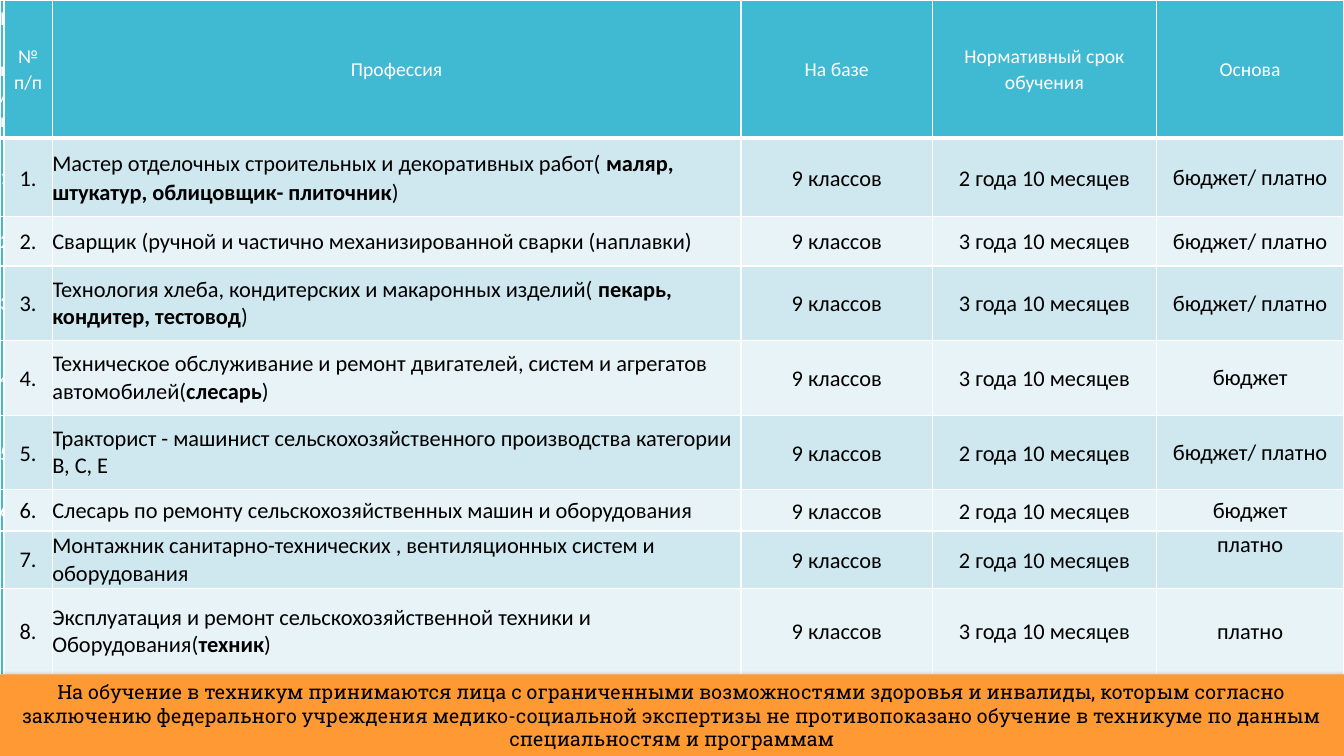
import pptx
import pptx.dml.color
import pptx.enum.shapes
import pptx.enum.text
import pptx.oxml
import pptx.oxml.ns
import pptx.util
from pptx.dml.color import RGBColor
from pptx.util import Inches

WHITE = RGBColor(0xFF, 0xFF, 0xFF)
BLACK = RGBColor(0x00, 0x00, 0x00)
TEAL = RGBColor(0x40, 0xBA, 0xD2)
BLUE_BAND = RGBColor(0xCF, 0xE7, 0xEE)
PALE_BAND = RGBColor(0xE8, 0xF3, 0xF7)
ORANGE = RGBColor(0xFF, 0x99, 0x33)

ALIGN = pptx.enum.text.PP_ALIGN
ANCHOR = pptx.enum.text.MSO_ANCHOR

COLUMN_WIDTHS = [0.03, 0.48, 6.83, 1.9, 2.22, 1.86]
ROW_HEIGHTS = [1.37, 0.78, 0.49, 0.74, 0.74, 0.74, 0.41, 0.57, 0.85]
HEADINGS = ["№ п/п", "№ п/п", "Профессия", "На базе", "Нормативный срок обучения", "Основа"]
BOTH = "бюджет/ платно"
PROFESSIONS = [
    ("Мастер отделочных строительных и декоративных работ( |маляр, штукатур, облицовщик- плиточник|)", 2, BOTH),
    ("Сварщик (ручной и частично механизированной сварки (наплавки)", 3, BOTH),
    ("Технология хлеба, кондитерских и макаронных изделий( |пекарь, кондитер, тестовод|)", 3, BOTH),
    ("Техническое обслуживание и ремонт двигателей, систем и агрегатов автомобилей(|слесарь|)", 3, "бюджет"),
    ("Тракторист - машинист сельскохозяйственного производства категории B, C, E", 2, BOTH),
    ("Слесарь по ремонту сельскохозяйственных машин и оборудования", 2, "бюджет"),
    ("Монтажник санитарно-технических , вентиляционных систем и\nоборудования", 2, "платно"),
    ("Эксплуатация и ремонт сельскохозяйственной техники и\nОборудования(|техник|)", 3, "платно"),
]
NOTICE = (
    "На обучение в техникум принимаются лица с ограниченными возможностями здоровья и инвалиды, "
    "которым согласно заключению федерального учреждения медико-социальной экспертизы "
    "не противопоказано обучение в техникуме по данным специальностям и программам"
)


def add_span(para, text, size, color, font="Calibri", bold=False):
    span = para.add_run()
    span.text = text
    span.font.name = font
    span.font.size = pptx.util.Pt(size)
    span.font.bold = bold
    span.font.color.rgb = color


def set_borders(cell, bottom):
    properties = cell._tc.get_or_add_tcPr()
    widths = {"lnL": 1, "lnR": 1, "lnT": 1, "lnB": bottom}
    for position, (side, width) in enumerate(widths.items()):
        border = pptx.oxml.parse_xml(
            f'<a:{side} {pptx.oxml.ns.nsdecls("a")} w="{pptx.util.Pt(width)}">'
            f'<a:solidFill><a:srgbClr val="{WHITE}"/></a:solidFill></a:{side}>'
        )
        properties.insert(position, border)


def fill_cell(cell, text, fill, color, size=16, align=ALIGN.CENTER, loose=True, bottom=1):
    cell.margin_left = cell.margin_right = cell.margin_top = cell.margin_bottom = 0
    cell.vertical_anchor = ANCHOR.MIDDLE
    cell.fill.solid()
    cell.fill.fore_color.rgb = fill
    set_borders(cell, bottom)
    frame = cell.text_frame
    for index, line in enumerate(text.split("\n") if text else []):
        para = frame.add_paragraph() if index else frame.paragraphs[0]
        para.alignment = align
        if loose:
            para.line_spacing = 1.07
            para.space_after = pptx.util.Pt(8)
        for part, words in enumerate(line.split("|")):
            add_span(para, words, size, color, bold=part % 2 == 1)


def add_professions(page):
    frame = page.shapes.add_table(
        len(ROW_HEIGHTS), len(COLUMN_WIDTHS), 0, 0, Inches(13.33), Inches(6.69)
    )
    table = frame.table
    for column, width in zip(table.columns, COLUMN_WIDTHS):
        column.width = Inches(width)
    for row, height in zip(table.rows, ROW_HEIGHTS):
        row.height = Inches(height)

    for column, heading in enumerate(HEADINGS):
        fill_cell(table.cell(0, column), heading, TEAL, WHITE, size=14, bottom=3)

    for number, (profession, years, basis) in enumerate(PROFESSIONS, 1):
        band = BLUE_BAND if number % 2 else PALE_BAND
        cells = table.rows[number].cells
        fill_cell(cells[0], str(number) if number < 7 else "", TEAL, WHITE, size=14)
        fill_cell(cells[1], f"{number}.", band, BLACK, loose=number < 6)
        fill_cell(cells[2], profession, band, BLACK, align=ALIGN.LEFT, loose=number == 1)
        fill_cell(cells[3], "9 классов", band, BLACK)
        fill_cell(cells[4], f"{years} года 10 месяцев", band, BLACK)
        fill_cell(cells[5], basis, band, BLACK, loose=False)
    table.cell(7, 5).vertical_anchor = ANCHOR.TOP


def add_shadow(shape):
    shape.shadow.inherit = False
    effects = shape._element.spPr.find(pptx.oxml.ns.qn("a:effectLst"))
    effects.append(pptx.oxml.parse_xml(
        f'<a:outerShdw {pptx.oxml.ns.nsdecls("a")} blurRad="{pptx.util.Pt(3.5)}" '
        f'dist="{pptx.util.Pt(1.1)}" dir="5400000" rotWithShape="0">'
        f'<a:srgbClr val="{BLACK}"><a:alpha val="45000"/></a:srgbClr></a:outerShdw>'
    ))


def add_notice(page):
    box = page.shapes.add_shape(
        pptx.enum.shapes.MSO_SHAPE.RECTANGLE, 0, Inches(6.69), Inches(13.33), Inches(0.81)
    )
    box.fill.solid()
    box.fill.fore_color.rgb = ORANGE
    box.line.fill.background()
    add_shadow(box)
    frame = box.text_frame
    frame.word_wrap = True
    frame.auto_size = pptx.enum.text.MSO_AUTO_SIZE.SHAPE_TO_FIT_TEXT
    frame.vertical_anchor = ANCHOR.MIDDLE
    para = frame.paragraphs[0]
    para.alignment = ALIGN.CENTER
    add_span(para, NOTICE, 14, BLACK, font="Roboto Slab")


def main():
    deck = pptx.Presentation()
    deck.slide_width = Inches(13.33)
    deck.slide_height = Inches(7.5)
    page = deck.slides.add_slide(deck.slide_layouts[6])
    add_professions(page)
    add_notice(page)
    deck.save("out.pptx")


if __name__ == "__main__":
    main()
